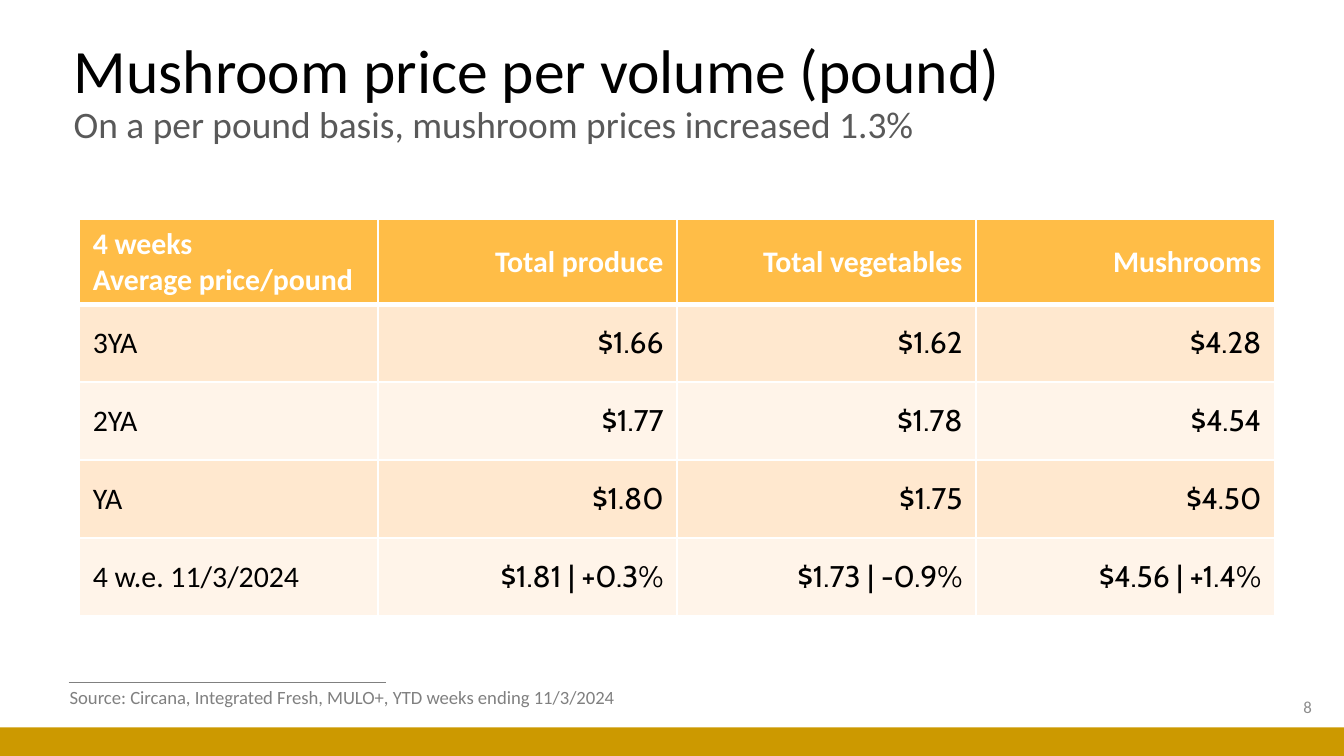
from dataclasses import dataclass

from lxml import etree
from pptx import Presentation
from pptx import util as u
from pptx.dml.color import RGBColor
from pptx.enum import shapes, text
from pptx.oxml.ns import qn

WIDTH = u.Inches(10)
HEIGHT = WIDTH * 9 // 16


@dataclass(frozen=True)
class Theme:
    font: str = "Calibri"
    figure_font: str = "Cabin"
    black: str = "000000"
    white: str = "FFFFFF"
    subtitle: str = "595959"
    muted: str = "808080"
    number: str = "8C8C8C"
    gold: str = "CC9900"
    header: str = "FFBD47"
    bands: tuple = ("FFE8CF", "FFF4E9")
    title_size: float = 33
    subtitle_size: float = 20
    table_size: float = 16
    source_size: float = 10
    number_size: float = 9


THEME = Theme()

ROWS = [
    ("4 weeks\nAverage price/pound", "Total produce", "Total vegetables", "Mushrooms"),
    ("3YA", "$1.66", "$1.62", "$4.28"),
    ("2YA", "$1.77", "$1.78", "$4.54"),
    ("YA", "$1.80", "$1.75", "$4.50"),
    ("4 w.e. 11/3/2024", "$1.81 | +0.3%", "$1.73 | -0.9%", "$4.56 | +1.4%"),
]


def across(percent):
    return u.Emu(round(WIDTH * percent / 100))


def down(percent):
    return u.Emu(round(HEIGHT * percent / 100))


def area(left, top, width, height):
    """Turn percentages of the slide into a position and size."""
    return across(left), down(top), across(width), down(height)


def add_span(para, words, size, color, name=THEME.font, bold=False):
    span = para.add_run()
    span.text = words
    values = {"size": u.Pt(size), "name": name, "bold": bold}
    for key, value in values.items():
        setattr(span.font, key, value)
    span.font.color.rgb = RGBColor.from_string(color)


def add_text_box(page, place, **frame_values):
    """Add a text box and return its first paragraph."""
    frame = page.shapes.add_textbox(*place).text_frame
    for key, value in frame_values.items():
        setattr(frame, key, value)
    return frame.paragraphs[0]


def add_bar(page, place, color):
    bar = page.shapes.add_shape(shapes.MSO_SHAPE.RECTANGLE, *place)
    bar.shadow.inherit = False
    bar.fill.solid()
    bar.fill.fore_color.rgb = RGBColor.from_string(color)
    bar.line.fill.background()


def add_rule(page, start, end, level, color):
    rule = page.shapes.add_connector(
        shapes.MSO_CONNECTOR.STRAIGHT, across(start), down(level), across(end), down(level))
    rule.line.color.rgb = RGBColor.from_string(color)
    rule.line.width = u.Pt(0.5)
    etree.SubElement(rule._element.spPr, qn("a:effectLst"))


def set_borders(cell, widths, color):
    """Draw the cell's edges; widths maps L, R, T, B to points."""
    properties = cell._tc.get_or_add_tcPr()
    for side, width in widths.items():
        edge = etree.SubElement(properties, qn(f"a:ln{side}"), w=str(u.Pt(width)))
        paint = etree.SubElement(edge, qn("a:solidFill"))
        etree.SubElement(paint, qn("a:srgbClr"), val=color)


def fill_cell(cell, words, row, column):
    heading, label = row == 0, column == 0
    widths = {"L": 1, "R": 1, "T": 3 if row == 1 else 1, "B": 3 if heading else 1}
    set_borders(cell, widths, THEME.white)
    cell.fill.solid()
    color = THEME.header if heading else THEME.bands[(row - 1) % 2]
    cell.fill.fore_color.rgb = RGBColor.from_string(color)
    cell.vertical_anchor = text.MSO_ANCHOR.MIDDLE
    frame = cell.text_frame
    for index, line in enumerate(words.split("\n")):
        para = frame.add_paragraph() if index else frame.paragraphs[0]
        para.alignment = text.PP_ALIGN.LEFT if label else text.PP_ALIGN.RIGHT
        add_span(para, line, THEME.table_size,
                 THEME.white if heading else THEME.black,
                 THEME.font if heading or label else THEME.figure_font, heading)


def add_price_table(page, place):
    holder = page.shapes.add_table(len(ROWS), len(ROWS[0]), *place)
    table = holder.table
    for row, values in enumerate(ROWS):
        table.rows[row].height = u.Inches(0.58 if row else 0.59)
        for column, words in enumerate(values):
            fill_cell(table.cell(row, column), words, row, column)
    # The two-line header needs more room than its row height
    holder.height = place[-1]


def main():
    deck = Presentation()
    deck.slide_width, deck.slide_height = WIDTH, HEIGHT
    page = deck.slides.add_slide(deck.slide_layouts[6])

    # Footer rule and bar
    add_rule(page, 5.1, 28.7, 90.3, THEME.muted)
    add_bar(page, area(0, 96.2, 100, 3.8), THEME.gold)

    # Title and subtitle
    para = add_text_box(page, area(4.5, 3.9, 87.4, 16.9),
                        word_wrap=True, vertical_anchor=text.MSO_ANCHOR.MIDDLE)
    para.line_spacing = 0.9
    add_span(para, "Mushroom price per volume (pound)", THEME.title_size, THEME.black)
    para.add_line_break()
    add_span(para, "On a per pound basis, mushroom prices increased 1.3%",
             THEME.subtitle_size, THEME.subtitle)

    # Page number
    para = add_text_box(page, area(76.1, 90.8, 22.5, 5.3),
                        word_wrap=True, vertical_anchor=text.MSO_ANCHOR.MIDDLE)
    para.alignment = text.PP_ALIGN.RIGHT
    add_span(para, "8", THEME.number_size, THEME.number)

    # Prices
    add_price_table(page, area(5.9, 29, 88.95, 52.6))

    # Source
    para = add_text_box(page, area(4.2, 89.8, 43.1, 4.8), word_wrap=False,
                        auto_size=text.MSO_AUTO_SIZE.SHAPE_TO_FIT_TEXT)
    add_span(para, "Source: Circana, Integrated Fresh, MULO+, YTD weeks ending 11/3/2024",
             THEME.source_size, THEME.muted)

    deck.save("out.pptx")


if __name__ == "__main__":
    main()
